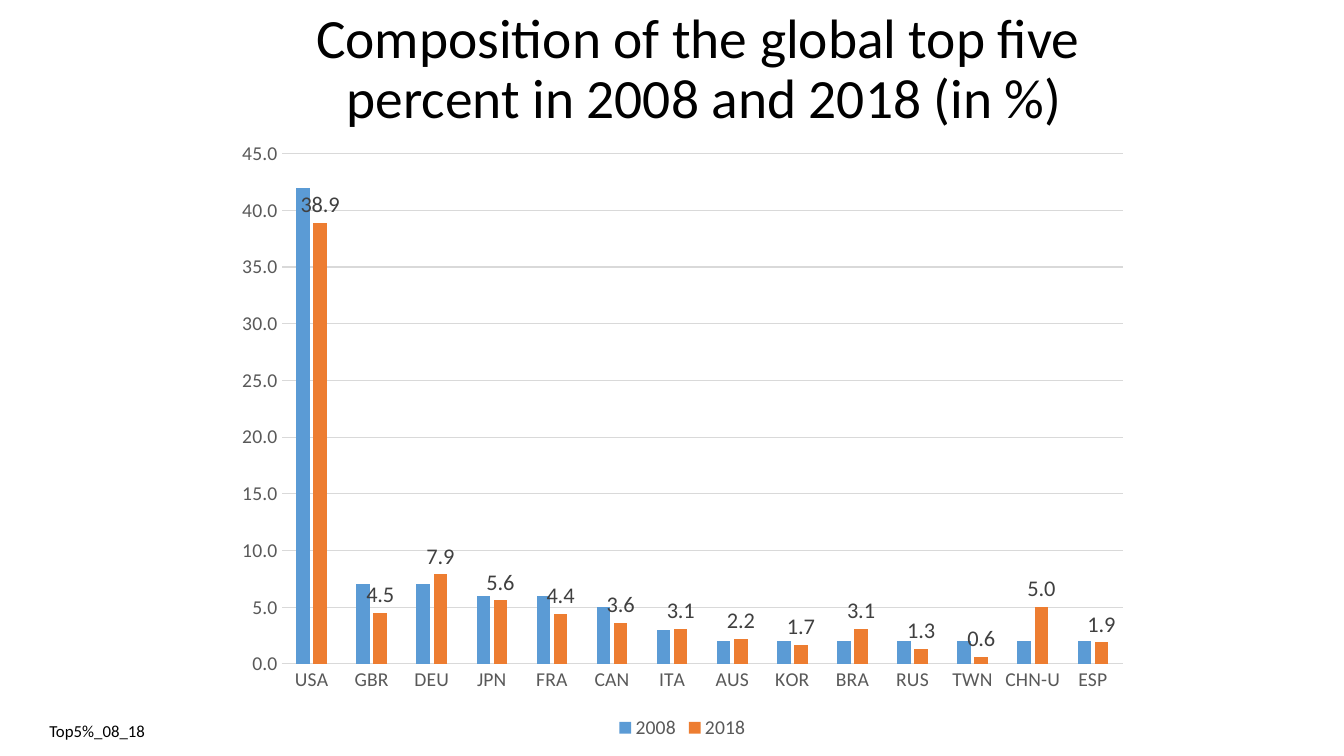
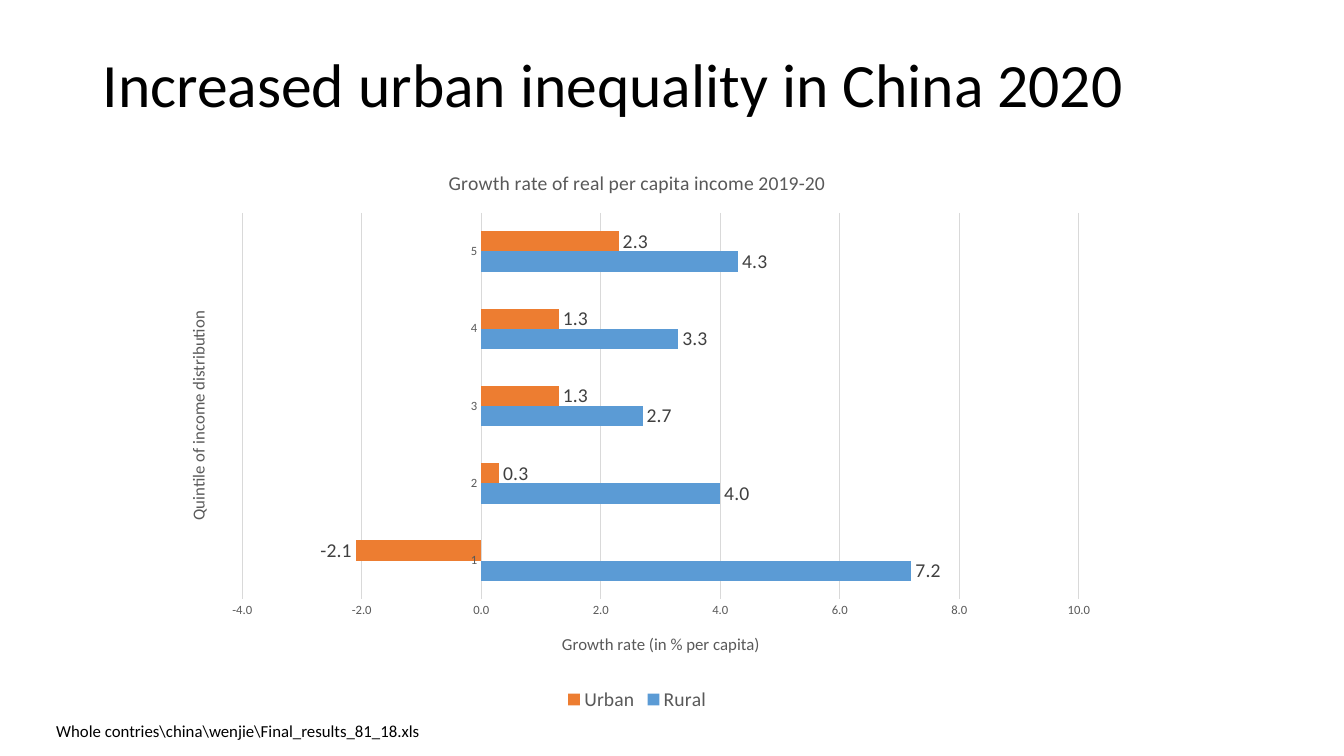
from lxml import etree
from pptx import Presentation
from pptx.chart.data import CategoryChartData
from pptx.dml.color import RGBColor
from pptx.enum.chart import XL_CHART_TYPE, XL_LABEL_POSITION, XL_LEGEND_POSITION, XL_TICK_MARK
from pptx.enum.text import MSO_ANCHOR, PP_ALIGN
from pptx.oxml.ns import qn
from pptx.util import Inches, Pt

COLUMNS = XL_CHART_TYPE.COLUMN_CLUSTERED
BARS = XL_CHART_TYPE.BAR_CLUSTERED
OUTSIDE = XL_LABEL_POSITION.OUTSIDE_END
BOTTOM = XL_LEGEND_POSITION.BOTTOM
NO_TICK = XL_TICK_MARK.NONE
MIDDLE = MSO_ANCHOR.MIDDLE
LEFT, CENTER = PP_ALIGN.LEFT, PP_ALIGN.CENTER

BLACK = RGBColor(0x00, 0x00, 0x00)
DARK_GRAY = RGBColor(0x40, 0x40, 0x40)
GRAY = RGBColor(0x59, 0x59, 0x59)
LIGHT_GRAY = RGBColor(0xD9, 0xD9, 0xD9)
BLUE = RGBColor(0x5B, 0x9B, 0xD5)
ORANGE = RGBColor(0xED, 0x7D, 0x31)
FONT = "Calibri"


def style_font(font, size, color):
    """Set the deck typeface with a size and colour."""
    font.name, font.size, font.bold = FONT, Pt(size), False
    font.color.rgb = color


def write_text(frame, text, *, size, color=BLACK, align=LEFT, spacing=1.0):
    """Fill a text frame with one formatted paragraph."""
    para = frame.paragraphs[0]
    para.text = text
    para.alignment, para.line_spacing = align, spacing
    for span in para.runs:
        style_font(span.font, size, color)


def place(parent, index, **shares):
    """Give a chart part a manual layout in percent of the chart."""
    for old in parent.findall(qn("c:layout")):
        parent.remove(old)
    layout = etree.Element(qn("c:layout"))
    manual = etree.SubElement(layout, qn("c:manualLayout"))
    if "w" in shares:
        etree.SubElement(manual, qn("c:layoutTarget")).set("val", "inner")
    for side in ("x", "y"):
        etree.SubElement(manual, qn(f"c:{side}Mode")).set("val", "edge")
    for name, share in shares.items():
        etree.SubElement(manual, qn(f"c:{name}")).set("val", str(share / 100))
    parent.insert(index, layout)


class Board:
    """Holds the deck, its style and the current slide; boxes are in percent of the slide."""

    def __init__(self):
        """Open a wide deck."""
        self.deck = Presentation()
        self.deck.slide_width, self.deck.slide_height = Inches(13.33), Inches(7.5)
        self.page = None

    def new_page(self):
        """Start a blank slide."""
        self.page = self.deck.slides.add_slide(self.deck.slide_layouts[6])

    def area(self, left, top, width, height):
        """Turn percentages into slide lengths."""
        wide, high = self.deck.slide_width / 100, self.deck.slide_height / 100
        return int(left * wide), int(top * high), int(width * wide), int(height * high)

    def text(self, box, text, **style):
        """Add a wrapped text box."""
        frame = self.page.shapes.add_textbox(*self.area(*box)).text_frame
        frame.word_wrap = True
        write_text(frame, text, **style)
        return frame

    def title(self, box, text, size, align=LEFT):
        """Add the slide title."""
        frame = self.text(box, text, size=size, align=align, spacing=0.9)
        frame.vertical_anchor = MIDDLE

    def source(self, left, width, text):
        """Add the source note at the foot of the slide."""
        self.text((left, 94.67, width, 4), text, size=12)

    def chart(self, box, kind, categories, series, *, plot_area, gap, overlap, axis_size, label_size):
        """Add a clustered chart; series holds name, colour, labelled and values."""
        data = CategoryChartData(number_format="0.0")
        data.categories = categories
        for name, _, _, values in series:
            data.add_series(name, values)
        chart = self.page.shapes.add_chart(kind, *self.area(*box), data).chart
        style_font(chart.font, 10, BLACK)
        chart.has_title = False
        chart.has_legend = True
        chart.legend.position = BOTTOM
        chart.legend.include_in_layout = False
        style_font(chart.legend.font, 14, GRAY)
        plot = chart.plots[0]
        plot.gap_width, plot.overlap, plot.vary_by_categories = gap, overlap, False
        for drawn, (_, color, labelled, _) in zip(plot.series, series):
            drawn.invert_if_negative = False
            drawn.format.fill.solid()
            drawn.format.fill.fore_color.rgb = color
            if labelled:
                labels = drawn.data_labels
                labels.show_value, labels.position = True, OUTSIDE
                labels.number_format, labels.number_format_is_linked = "0.0", False
                style_font(labels.font, label_size, DARK_GRAY)
        self.axes(chart, axis_size)
        place(chart.element.find(f".//{qn('c:plotArea')}"), 0, **plot_area)
        return chart

    def axes(self, chart, size):
        """Style both axes and the gridlines."""
        category, value = chart.category_axis, chart.value_axis
        for axis in (category, value):
            axis.major_tick_mark = axis.minor_tick_mark = NO_TICK
            style_font(axis.tick_labels.font, size, GRAY)
        value.has_major_gridlines = True
        for line in (category.format.line, value.major_gridlines.format.line):
            line.color.rgb, line.width = LIGHT_GRAY, Pt(0.75)
        value.format.line.fill.background()
        value.tick_labels.number_format = "0.0"
        value.tick_labels.number_format_is_linked = False

    def chart_title(self, title, text, size, x, y, turn=0):
        """Write a chart or axis title at a place in the chart."""
        write_text(title.text_frame, text, size=size, color=GRAY, align=CENTER)
        title.element.find(f".//{qn('a:bodyPr')}").set("rot", str(turn * 60000))
        place(title.element, 1, x=x, y=y)


def top_five_page(board):
    """Build the slide on the global top five percent."""
    countries = ["USA", "GBR", "DEU", "JPN", "FRA", "CAN", "ITA",
                 "AUS", "KOR", "BRA", "RUS", "TWN", "CHN-U", "ESP"]
    shares_2008 = [42, 7, 7, 6, 6, 5, 3, 2, 2, 2, 2, 2, 2, 2]
    shares_2018 = [38.9, 4.5, 7.9, 5.6, 4.4, 3.6, 3.1, 2.2, 1.7, 3.1, 1.3, 0.6, 5, 1.9]
    board.new_page()
    board.title((10.88, 1.6, 83.05, 15.47),
                "Composition of the global top five \vpercent in 2008 and 2018 (in %)", 39.6, CENTER)
    board.source(2.93, 21.9, "Top5%_08_18")
    board.chart((16.65, 17.07, 68.27, 81.33), COLUMNS, countries,
                [("2008", BLUE, False, shares_2008), ("2018", ORANGE, True, shares_2018)],
                plot_area={"x": 6.3, "y": 4, "w": 91.7, "h": 83},
                gap=219, overlap=-27, axis_size=14, label_size=16)


def inequality_page(board):
    """Build the slide on urban inequality."""
    board.new_page()
    board.title((6.9, 5.33, 84.17, 12.53), "Increased urban inequality in China 2020", 44)
    chart = board.chart((12.3, 19.6, 70.22, 75.07), BARS, ["1", "2", "3", "4", "5"],
                        [("Rural", BLUE, True, [7.2, 4, 2.7, 3.3, 4.3]),
                         ("Urban", ORANGE, True, [-2.1, 0.3, 1.3, 1.3, 2.3])],
                        plot_area={"x": 8.15, "y": 11.4, "w": 88.65, "h": 68.1},
                        gap=182, overlap=0, axis_size=9, label_size=14)
    chart.value_axis.minimum_scale, chart.value_axis.maximum_scale = -4, 10
    chart.value_axis.major_unit = 2
    board.chart_title(chart.chart_title, "Growth rate of real per capita income 2019-20", 14, 29.65, 3.1)
    board.chart_title(chart.category_axis.axis_title, "Quintile of income distribution", 12, 1.95, 28.15, -90)
    board.chart_title(chart.value_axis.axis_title, "Growth rate (in % per capita)", 12, 41.7, 84.9)
    board.source(3.45, 46.73, "Whole contries\\china\\wenjie\\Final_results_81_18.xls")


def main():
    """Build and save the deck."""
    board = Board()
    top_five_page(board)
    inequality_page(board)
    board.deck.save("out.pptx")


if __name__ == "__main__":
    main()
